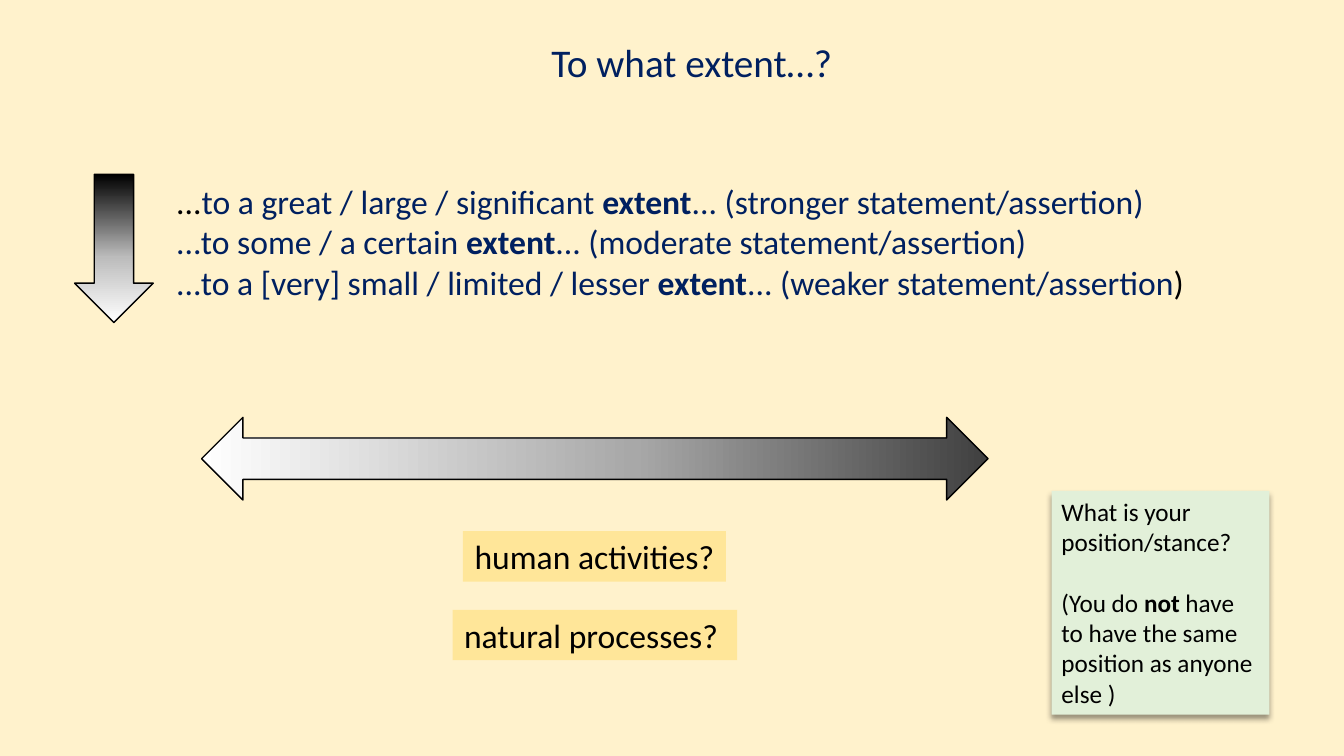
from pptx import Presentation
from pptx.dml.color import RGBColor as Rgb
from pptx.enum.shapes import MSO_SHAPE as Geom
from pptx.enum.text import MSO_ANCHOR as Anchor, MSO_AUTO_SIZE as Auto, PP_ALIGN as Align
from pptx.oxml import parse_xml
from pptx.oxml.ns import nsdecls
from pptx.util import Pt

PX = 9144
CREAM = Rgb(0xFF, 0xF2, 0xCC)
GOLD = Rgb(0xFF, 0xE6, 0x99)
MINT = Rgb(0xE2, 0xF0, 0xD9)
NAVY = Rgb(0x00, 0x20, 0x60)
BLACK = Rgb(0x00, 0x00, 0x00)
CHARCOAL = Rgb(0x40, 0x40, 0x40)
GRAY = Rgb(0xA8, 0xA8, 0xA8)
SILVER = Rgb(0xBC, 0xBC, 0xBC)
WHITE = Rgb(0xFF, 0xFF, 0xFF)


class Board:
    font = "Calibri"

    def __init__(self, wide, high):
        self.deck = Presentation()
        self.deck.slide_width, self.deck.slide_height = wide * PX, high * PX
        self.slide = self.deck.slides.add_slide(self.deck.slide_layouts[6])
        fill = self.slide.background.fill
        fill.solid()
        fill.fore_color.rgb = CREAM

    def label(self, shape, lines, size, align=Align.LEFT, anchor=Anchor.TOP, wrap=True, gap=0):
        frame = shape.text_frame
        frame.word_wrap = wrap
        frame.auto_size = Auto.SHAPE_TO_FIT_TEXT
        frame.vertical_anchor = anchor
        for row, parts in enumerate(lines):
            para = frame.add_paragraph() if row else frame.paragraphs[0]
            para.alignment = align
            if row and gap:
                para.space_before = Pt(gap)
            for words, color, bold in parts:
                run = para.add_run()
                run.text = words
                run.font.name, run.font.size = self.font, Pt(size)
                run.font.bold, run.font.color.rgb = bold, color

    def text(self, box, lines, size, **style):
        shape = self.slide.shapes.add_textbox(*[n * PX for n in box])
        self.label(shape, lines, size, **style)

    def shape(self, kind, box):
        shape = self.slide.shapes.add_shape(kind, *[n * PX for n in box])
        shape.shadow.inherit = False
        return shape

    def card(self, box, color, lines, size, **style):
        card = self.shape(Geom.RECTANGLE, box)
        card.fill.solid()
        card.fill.fore_color.rgb = color
        card.line.fill.background()
        self.label(card, lines, size, **style)
        return card

    def shade(self, card, blur, drop, alpha):
        card._element.spPr[-1].append(parse_xml(
            f'<a:outerShdw {nsdecls("a")} blurRad="{Pt(blur)}" dist="{Pt(drop)}" dir="5400000" '
            f'algn="t" rotWithShape="0"><a:srgbClr val="{BLACK}">'
            f'<a:alpha val="{alpha * 1000}"/></a:srgbClr></a:outerShdw>'))

    def arrow(self, kind, box, stops, angle):
        arrow = self.shape(kind, box)
        arrow.line.color.rgb = BLACK
        arrow.line.width = Pt(1)
        marks = "".join(f'<a:gs pos="{at * 1000}"><a:srgbClr val="{color}"/></a:gs>'
                        for at, color in stops)
        arrow._element.spPr.insert(2, parse_xml(
            f'<a:gradFill {nsdecls("a")} rotWithShape="1"><a:gsLst>{marks}</a:gsLst>'
            f'<a:lin ang="{angle * 60000}" scaled="0"/></a:gradFill>'))


def main():
    board = Board(1333, 750)
    key = ("extent", NAVY, True)
    board.text((165, 174, 1046, 131), [
        [("...", BLACK, False), ("to a great / large / significant ", NAVY, False), key,
         ("... (stronger statement/assertion)", NAVY, False)],
        [("...to some / a certain ", NAVY, False), key,
         ("... (moderate statement/assertion)", NAVY, False)],
        [("...to a [very] small / limited / lesser ", NAVY, False), key,
         ("... (weaker statement/assertion", NAVY, False), (")", BLACK, False)],
    ], 24, anchor=Anchor.MIDDLE)

    for box, cause in (((459, 527, 261, 50), "human activities?"),
                       ((449, 605, 282, 50), "natural processes? ")):
        board.card(box, GOLD, [[(cause, BLACK, False)]], 24, align=Align.CENTER)

    note = board.card((1043, 487, 216, 222), MINT, [
        [("What is your position/stance?", BLACK, False)],
        [("(You do ", BLACK, False), ("not", BLACK, True),
         (" have to have the same position as anyone else )", BLACK, False)],
    ], 18, gap=22)
    board.shade(note, 4, 3, 40)

    board.arrow(Geom.DOWN_ARROW, (74, 173, 78, 147),
                ((0, BLACK), (56, SILVER), (100, WHITE)), 90)
    board.arrow(Geom.LEFT_RIGHT_ARROW, (200, 414, 780, 82),
                ((0, CHARCOAL), (45, GRAY), (100, WHITE)), 180)

    board.text((537, 33, 302, 57), [[("To what extent…?", NAVY, False)]], 28, wrap=False)
    board.deck.save("out.pptx")


if __name__ == "__main__":
    main()
